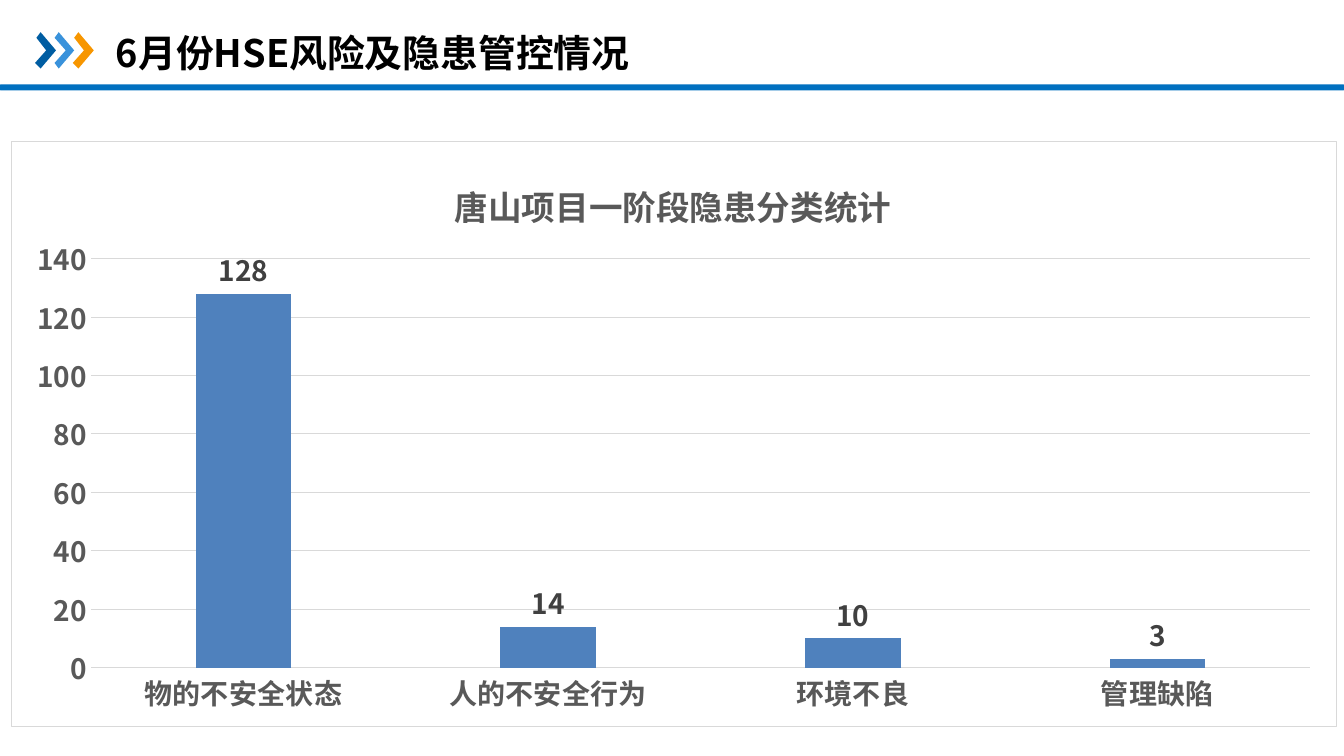
from lxml.etree import SubElement
from pptx import Presentation
from pptx.chart.data import CategoryChartData
from pptx.dml.color import RGBColor
from pptx.enum.chart import XL_CHART_TYPE, XL_LABEL_POSITION, XL_TICK_MARK
from pptx.enum.shapes import MSO_SHAPE
from pptx.enum.text import MSO_ANCHOR, PP_ALIGN
from pptx.oxml import parse_xml
from pptx.oxml.ns import nsdecls, qn
from pptx.util import Pt

FONT = "Noto Sans CJK SC"
GRID_COLOUR = "D9D9D9"
AXIS_TEXT_COLOUR = "595959"
CHEVRON_COLOURS = ["005DA2", "3992DB", "F79600"]
CHEVRON_OUTLINE = [(0.6, 3.6), (3.6, 0), (14.4, 13), (3.6, 26), (0, 21.6), (7.9, 13)]
HAZARD_COUNTS = {"物的不安全状态": 128, "人的不安全行为": 14, "环境不良": 10, "管理缺陷": 3}


def colour(hex_string):
    """Return the colour for a hex string."""
    return RGBColor.from_string(hex_string)


def style_font(font, size, hex_string):
    """Set the bold slide font at a size and colour."""
    font.name = FONT
    font.size = Pt(size)
    font.bold = True
    font.color.rgb = colour(hex_string)


def add_east_asian_font(element):
    """Name the slide font for Chinese text wherever a Latin font is named."""
    for latin in list(element.iter(qn("a:latin"))):
        latin.addnext(parse_xml(f'<a:ea {nsdecls("a")} typeface="{FONT}"/>'))


def fill_plain(shape, hex_string):
    """Give a shape a flat fill without line or shadow."""
    shape.fill.solid()
    shape.fill.fore_color.rgb = colour(hex_string)
    shape.line.fill.background()
    shape.shadow.inherit = False


def add_chevrons(slide, left, top, pitch):
    """Draw the row of chevrons from its top left corner."""
    for index, hex_string in enumerate(CHEVRON_COLOURS):
        points = [(left + index * pitch + x, top + y) for x, y in CHEVRON_OUTLINE]
        builder = slide.shapes.build_freeform(*points[0], scale=Pt(1))
        builder.add_line_segments(points[1:], close=True)
        fill_plain(builder.convert_to_shape(), hex_string)


def add_header(slide, left, top, width, height):
    """Place the rule, chevrons and title in the header box."""
    rule_height = 4.4
    rule = slide.shapes.add_shape(
        MSO_SHAPE.ROUNDED_RECTANGLE,
        Pt(left), Pt(top + height - rule_height), Pt(width), Pt(rule_height),
    )
    fill_plain(rule, "0070C0")
    add_chevrons(slide, left + 25.4, top + 23, 13.4)

    title = slide.shapes.title
    title.left, title.top = Pt(left + 75.6), Pt(top + 8.6)
    title.width, title.height = Pt(864), Pt(57)
    title.text_frame.text = "6月份HSE风险及隐患管控情况"
    title.text_frame.vertical_anchor = MSO_ANCHOR.MIDDLE
    paragraph = title.text_frame.paragraphs[0]
    paragraph.alignment = PP_ALIGN.LEFT
    style_font(paragraph.runs[0].font, 27, "000000")
    add_east_asian_font(title.element)


def set_layout(parent, position, target=None, **fractions):
    """Fix a chart part at fractions of the chart size."""
    for old_layout in parent.findall(qn("c:layout")):
        parent.remove(old_layout)
    layout = parse_xml(f'<c:layout {nsdecls("c")}/>')
    manual = SubElement(layout, qn("c:manualLayout"))
    if target:
        SubElement(manual, qn("c:layoutTarget"), val=target)
    for name in ("xMode", "yMode"):
        SubElement(manual, qn(f"c:{name}"), val="edge")
    for name, fraction in fractions.items():
        SubElement(manual, qn(f"c:{name}"), val=str(fraction))
    parent.insert(position, layout)


def format_axes(chart):
    """Style both axes and the gridlines."""
    for axis in (chart.category_axis, chart.value_axis):
        axis.major_tick_mark = axis.minor_tick_mark = XL_TICK_MARK.NONE
        style_font(axis.tick_labels.font, 20, AXIS_TEXT_COLOUR)
    value_axis = chart.value_axis
    value_axis.minimum_scale, value_axis.maximum_scale = 0, 140
    value_axis.major_unit = 20
    value_axis.format.line.fill.background()
    for line in (chart.category_axis.format.line, value_axis.major_gridlines.format.line):
        line.color.rgb = colour(GRID_COLOUR)
        line.width = Pt(0.75)


def format_columns(chart):
    """Style the columns and their value labels."""
    plot = chart.plots[0]
    plot.vary_by_categories = False
    plot.gap_width, plot.overlap = 219, -27
    series = plot.series[0]
    series.format.fill.solid()
    series.format.fill.fore_color.rgb = colour("4F81BD")
    labels = series.data_labels
    labels.show_value = True
    labels.position = XL_LABEL_POSITION.OUTSIDE_END
    style_font(labels.font, 20, "404040")


def add_hazard_chart(slide, left, top, width, height):
    """Place the framed hazard chart in its box."""
    data = CategoryChartData()
    data.categories = list(HAZARD_COUNTS)
    data.add_series("Series 1", list(HAZARD_COUNTS.values()))
    chart = slide.shapes.add_chart(
        XL_CHART_TYPE.COLUMN_CLUSTERED, Pt(left), Pt(top), Pt(width), Pt(height), data
    ).chart
    chart.has_legend = False
    style_font(chart.font, 20, "000000")
    chart.has_title = True
    chart.chart_title.include_in_layout = False
    title_frame = chart.chart_title.text_frame
    title_frame.text = "唐山项目一阶段隐患分类统计"
    style_font(title_frame.paragraphs[0].runs[0].font, 24, AXIS_TEXT_COLOUR)
    format_axes(chart)
    format_columns(chart)

    chart_element = chart.element.find(qn("c:chart"))
    set_layout(chart_element.find(qn("c:title")), 1, x=0.33, y=0.05)
    set_layout(chart_element.find(qn("c:plotArea")), 0, "inner", x=0.06, y=0.2, w=0.92, h=0.7)
    chart_element.addnext(parse_xml(
        f'<c:spPr {nsdecls("c", "a")}>'
        '<a:solidFill><a:srgbClr val="FFFFFF"/></a:solidFill>'
        f'<a:ln w="{Pt(0.75)}"><a:solidFill><a:srgbClr val="{GRID_COLOUR}"/></a:solidFill></a:ln>'
        '</c:spPr>'
    ))
    add_east_asian_font(chart.element)


def main():
    """Build and save the slide."""
    presentation = Presentation()
    presentation.slide_width, presentation.slide_height = Pt(960), Pt(540)
    slide = presentation.slides.add_slide(presentation.slide_layouts.get_by_name("Title Only"))
    add_header(slide, 0, 0, 960, 64.6)
    add_hazard_chart(slide, 8, 101, 947, 418)
    presentation.save("out.pptx")


if __name__ == "__main__":
    main()
